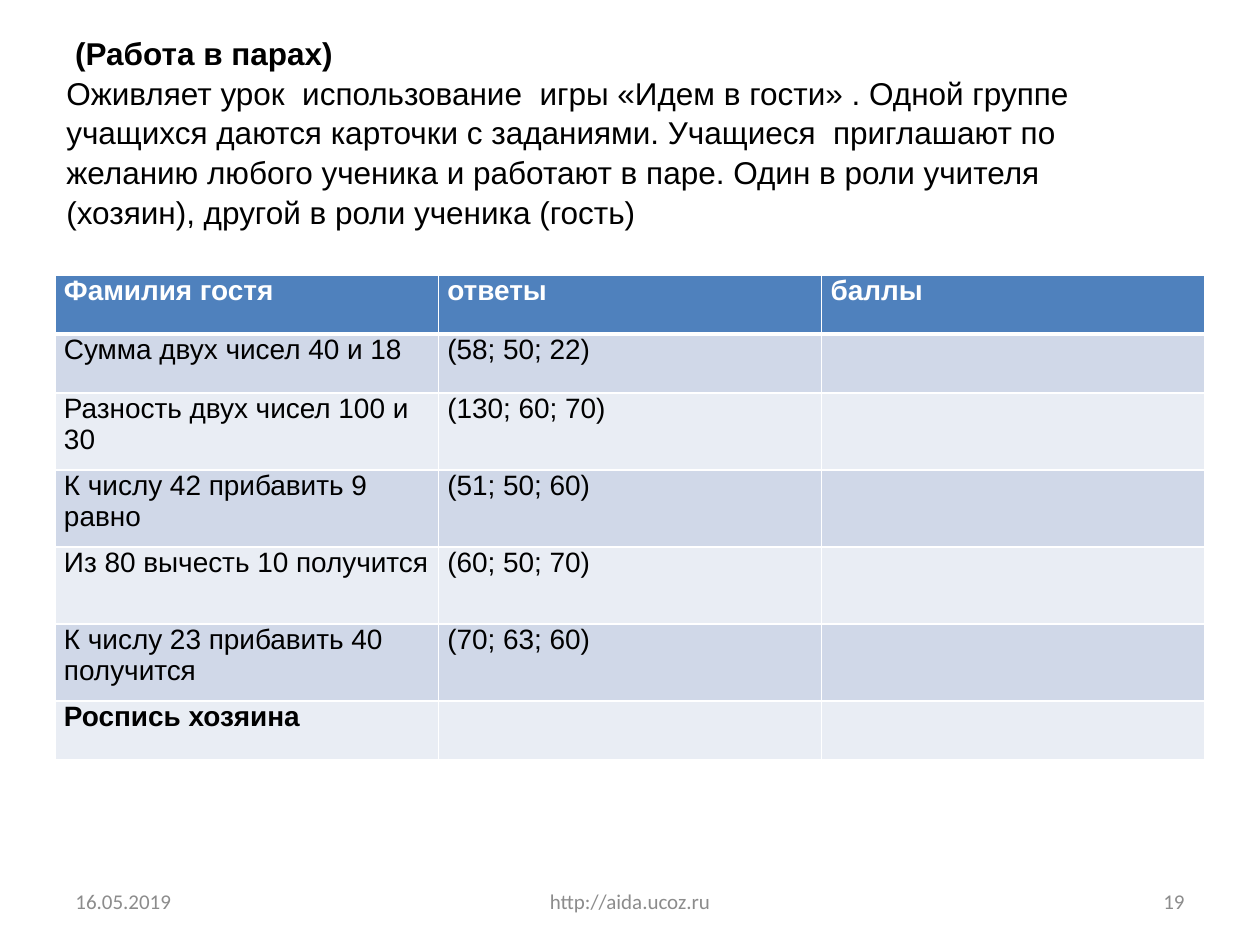
from lxml.etree import SubElement
from pptx import Presentation
from pptx.dml.color import RGBColor
from pptx.enum.text import MSO_ANCHOR as ANCHOR, PP_ALIGN as ALIGN
from pptx.oxml.ns import qn
from pptx.util import Pt

PX = 914400 // 126
WHITE = RGBColor(0xFF, 0xFF, 0xFF)
BLACK = RGBColor(0, 0, 0)
GRAY = RGBColor(0x8C, 0x8C, 0x8C)
HEADER = RGBColor(0x4F, 0x81, 0xBD)
BANDS = RGBColor(0xE9, 0xED, 0xF4), RGBColor(0xD0, 0xD8, 0xE8)

INTRO = (
    " (Работа в парах)",
    "Оживляет урок  использование  игры «Идем в гости» . Одной группе "
    "учащихся даются карточки с заданиями. Учащиеся  приглашают по желанию "
    "любого ученика и работают в паре. Один в роли учителя (хозяин), "
    "другой в роли ученика (гость)",
)
ROWS = [
    ("Фамилия гостя", "ответы", "баллы"),
    ("Сумма двух чисел 40 и 18", "(58; 50; 22)", ""),
    ("Разность двух чисел 100 и 30", "(130; 60; 70)", ""),
    ("К числу 42 прибавить 9 равно", "(51; 50; 60)", ""),
    ("Из 80 вычесть 10 получится", "(60; 50; 70)", ""),
    ("К числу 23 прибавить 40 получится", "(70; 63; 60)", ""),
    ("Роспись хозяина", "", ""),
]
ROW_HEIGHTS = [59, 59, 77, 77, 77, 77, 59]


def px(*values):
    return [v * PX for v in values]


def set_font(font, size, name, color, bold=False):
    font.size, font.name, font.bold = Pt(size), name, bold
    font.color.rgb = color


def add_text(s, box, lines):
    tf = s.shapes.add_textbox(*px(*box)).text_frame
    tf.word_wrap = True
    tf.text = "\n".join(lines)
    return tf


def add_intro(s, box):
    tf = add_text(s, box, INTRO)
    for i, p in enumerate(tf.paragraphs):
        p.line_spacing = 1.05
        set_font(p.runs[0].font, 18, "Arial", BLACK, i == 0)


def set_borders(cell, widths):
    tc_pr = cell._tc.get_or_add_tcPr()
    for side, width in widths.items():
        ln = SubElement(tc_pr, qn(f"a:{side}"), w=str(Pt(width)))
        fill = SubElement(ln, qn("a:solidFill"))
        SubElement(fill, qn("a:srgbClr"), val=str(WHITE))


def add_score_table(s, box):
    n_rows, n_cols = len(ROWS), len(ROWS[0])
    table = s.shapes.add_table(n_rows, n_cols, *px(*box)).table
    for col in table.columns:
        col.width = box[2] * PX // n_cols
    for i, (texts, height) in enumerate(zip(ROWS, ROW_HEIGHTS)):
        table.rows[i].height = height * PX
        for j, text in enumerate(texts):
            cell = table.cell(i, j)
            cell.margin_left = cell.margin_right = 9 * PX
            cell.margin_top = cell.margin_bottom = 0
            set_borders(cell, {"lnL": 1, "lnR": 1,
                               "lnT": 3 if i == 1 else 1,
                               "lnB": 3 if i == 0 else 1})
            cell.fill.solid()
            cell.fill.fore_color.rgb = BANDS[i % 2] if i else HEADER
            cell.text = text
            p = cell.text_frame.paragraphs[0]
            for font in [p.font] + [r.font for r in p.runs]:
                set_font(font, 16, "Arial", BLACK if i else WHITE,
                         i in (0, n_rows - 1))


def add_footer(s, box):
    x, y, w, h = box
    parts = [
        ("16.05.2019", 0, 294, ALIGN.LEFT),
        ("http://aida.ucoz.ru", (w - 400) // 2, 400, ALIGN.CENTER),
        ("19", w - 294, 294, ALIGN.RIGHT),
    ]
    for text, dx, width, align in parts:
        tf = add_text(s, (x + dx, y, width, h), [text])
        tf.vertical_anchor = ANCHOR.MIDDLE
        p = tf.paragraphs[0]
        p.alignment = align
        set_font(p.runs[0].font, 12, "Calibri", GRAY)


def main():
    prs = Presentation()
    prs.slide_width, prs.slide_height = px(1260, 945)
    s = prs.slides.add_slide(prs.slide_layouts[6])
    add_score_table(s, (55, 275, 1150, sum(ROW_HEIGHTS)))
    add_footer(s, (63, 876, 1134, 50))
    add_intro(s, (54, 26, 1062, 204))
    prs.save("out.pptx")


if __name__ == "__main__":
    main()
